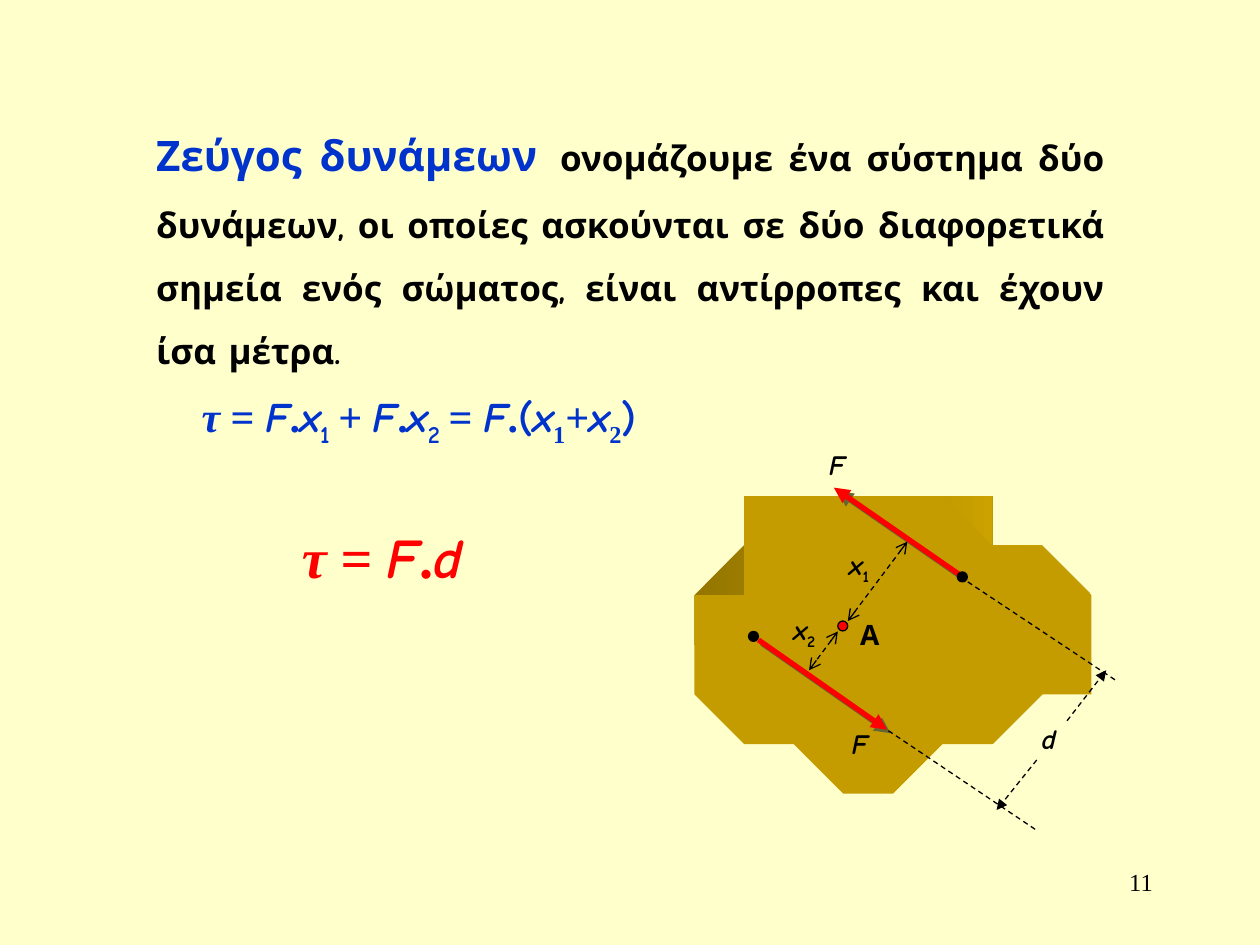
"""Build a slide that defines a force couple and draws it on a solid body."""
from lxml import etree
from pptx import Presentation
from pptx import util as u
from pptx.dml.color import RGBColor
from pptx.enum import dml, shapes, text
from pptx.oxml.ns import qn

HUES = {"page": "FFFFCC", "blue": "0033CC", "red": "FF0000", "black": "000000",
        "face": "C49C00", "dark": "947600", "light": "DDB000", "shade": "666633"}
HUES = {name: RGBColor.from_string(code) for name, code in HUES.items()}
FONTS = {"c": "Comic Neue", "t": "Times New Roman"}
LEFT, RIGHT = text.PP_ALIGN.LEFT, text.PP_ALIGN.RIGHT
MID, FULL = text.PP_ALIGN.CENTER, text.PP_ALIGN.JUSTIFY

deck = Presentation()
deck.slide_width, deck.slide_height = u.Cm(25.4), u.Cm(19.05)
slide = deck.slides.add_slide(deck.slide_layouts[6])
slide.background.fill.solid()
slide.background.fill.fore_color.rgb = HUES["page"]


def write(box, size, hue, runs, align=LEFT, bold=True):
    """Add a text box; run marks are c or t (font), i (italic), s (subscript)."""
    frame = slide.shapes.add_textbox(*map(u.Cm, box)).text_frame
    frame.word_wrap = True
    frame.auto_size = text.MSO_AUTO_SIZE.SHAPE_TO_FIT_TEXT
    para = frame.paragraphs[0]
    para.alignment = align
    para.font.size, para.font.bold = u.Pt(size), bold
    para.font.color.rgb = HUES[hue]
    for words, marks in runs:
        run = para.add_run()
        run.text = words
        run.font.name = FONTS[marks[0]]
        if "i" in marks:
            run.font.italic = True
        if "s" in marks:
            run.font._element.set("baseline", "-25000")
    return para


def draw(ends, hue="black", width=0.75, head=None, tail=None, force=False):
    """Add a dashed line, or a solid force arrow with a shadow."""
    line = slide.shapes.add_connector(shapes.MSO_CONNECTOR.STRAIGHT, *map(u.Cm, ends))
    line.line.color.rgb, line.line.width = HUES[hue], u.Pt(width)
    if not force:
        line.line.dash_style = dml.MSO_LINE.DASH
    props = line._element.spPr
    for tag, kind in (("a:headEnd", head), ("a:tailEnd", tail)):
        if kind:
            etree.SubElement(props.find(qn("a:ln")), qn(tag), type=kind)
    glow = etree.SubElement(props, qn("a:effectLst"))
    if force:
        cast = etree.SubElement(glow, qn("a:outerShdw"), dist=str(u.Pt(2.8)),
                                dir="2700000", algn="ctr", rotWithShape="0")
        etree.SubElement(cast, qn("a:srgbClr"), val=str(HUES["shade"]))


write((18.21, 17.35, 5.28, 1.27), 14, "black", [("11", "t")], RIGHT, False)

lead = write((2.9, 1.52, 19.61, 4.88), 20, "black", [
    ("Ζεύγος δυνάμεων", "c"), (" ", "c"),
    ("ονομάζουμε ένα σύστημα δύο δυνάμεων, οι οποίες ασκούνται σε δύο "
     "διαφορετικά σημεία ενός σώματος, είναι αντίρροπες και έχουν ίσα μέτρα.", "c")], FULL)
lead.line_spacing = 1.5
term, gap = lead.runs[:2]
term.font.size, gap.font.size = u.Pt(24), u.Pt(32)
term.font.color.rgb = HUES["blue"]

rim = [(15.11, 10.87), (14.55, 11.51), (14.15, 12.12), (13.97, 12.75), (14, 13.51),
       (14.35, 14.15), (14.48, 14.4), (14.94, 14.68), (15.54, 15.06), (15.88, 15.24),
       (16.26, 15.32), (16.94, 15.57), (18.11, 15.54), (19.23, 15.24), (19.74, 15.04),
       (20.57, 14.43), (20.83, 14.27), (21.54, 13.67), (21.89, 13.08), (21.9, 12.5),
       (21.82, 11.94), (21.64, 11.76), (20.88, 11.23), (20.55, 11), (20.12, 10.85),
       (19.76, 10.62), (19.38, 10.36), (19, 10.16), (18, 10.09), (16.96, 9.96),
       (15.98, 10), (15.16, 10.41)]
for name, dx, dy in (("back", 0.3, -0.25), ("front", 0, 0)):
    spots = [(x + dx, y + dy) for x, y in rim]
    path = slide.shapes.build_freeform(*spots[0], scale=u.Cm(1))
    path.add_line_segments(spots[1:], close=True)
    solid = path.convert_to_shape()
    solid.shadow.inherit = False
    solid.line.fill.background()
    if name == "back":
        solid.fill.gradient()
        solid.fill.gradient_angle = 0
        for stop, hue in zip(solid.fill.gradient_stops, ("dark", "light")):
            stop.color.rgb = HUES[hue]
    else:
        solid.fill.solid()
        solid.fill.fore_color.rgb = HUES["face"]

for ends in ((19.41, 11.63, 16.81, 9.83), (15.29, 12.9, 17.88, 14.71)):
    draw(ends, "red", 3, tail="triangle", force=True)
for ends in ((17.09, 12.52, 18.29, 10.92), (16.89, 12.73, 16.31, 13.51)):
    draw(ends, head="arrow", tail="arrow")
for ends in ((19.51, 11.73, 22.5, 13.72), (17.91, 14.73, 20.9, 16.74)):
    draw(ends)
for ends in ((20.9, 15.32, 20.09, 16.33), (21.51, 14.53, 22.3, 13.51)):
    draw(ends, tail="triangle")

for x, y, wide, runs in (
        (17.09, 12.32, 0.79, [("Α", "c")]),
        (16.87, 10.92, 1.17, [("x", "ci"), ("1", "cs")]),
        (15.75, 12.22, 1.12, [("x", "ci"), ("2", "cs")]),
        (16.46, 8.89, 0.99, [("F", "ci")]),
        (16.92, 14.53, 0.99, [("F", "ci")]),
        (20.75, 14.43, 0.99, [("d", "ci")])):
    write((x, y, wide, 0.94), 16, "black", runs)

write((5.66, 10.41, 4.09, 1.63), 32, "red", [
    ("τ", "ti"), (" = ", "t"), ("F", "ci"), (".", "t"), ("d", "ci")], MID)
force = [("F", "ci"), (".", "t")]
write((2.95, 7.75, 11, 1.27), 24, "blue", [
    ("τ ", "ti"), ("= ", "t"), *force, ("x", "ci"), ("1 ", "cs"), ("+ ", "t"),
    *force, ("x", "ci"), ("2 ", "cs"), ("= ", "t"), *force, ("(", "c"),
    ("x", "ci"), ("1", "ts"), ("+", "t"), ("x", "ci"), ("2", "ts"), (")", "c")], MID)

for x, y, hue in ((16.89, 12.52, "red"), (19.3, 11.53, "black"), (15.09, 12.73, "black")):
    dot = slide.shapes.add_shape(shapes.MSO_SHAPE.OVAL, *map(u.Cm, (x, y, 0.2, 0.2)))
    dot.shadow.inherit = False
    dot.fill.solid()
    dot.fill.fore_color.rgb = HUES[hue]
    dot.line.color.rgb, dot.line.width = HUES["black"], u.Pt(0.75)

deck.save("out.pptx")
